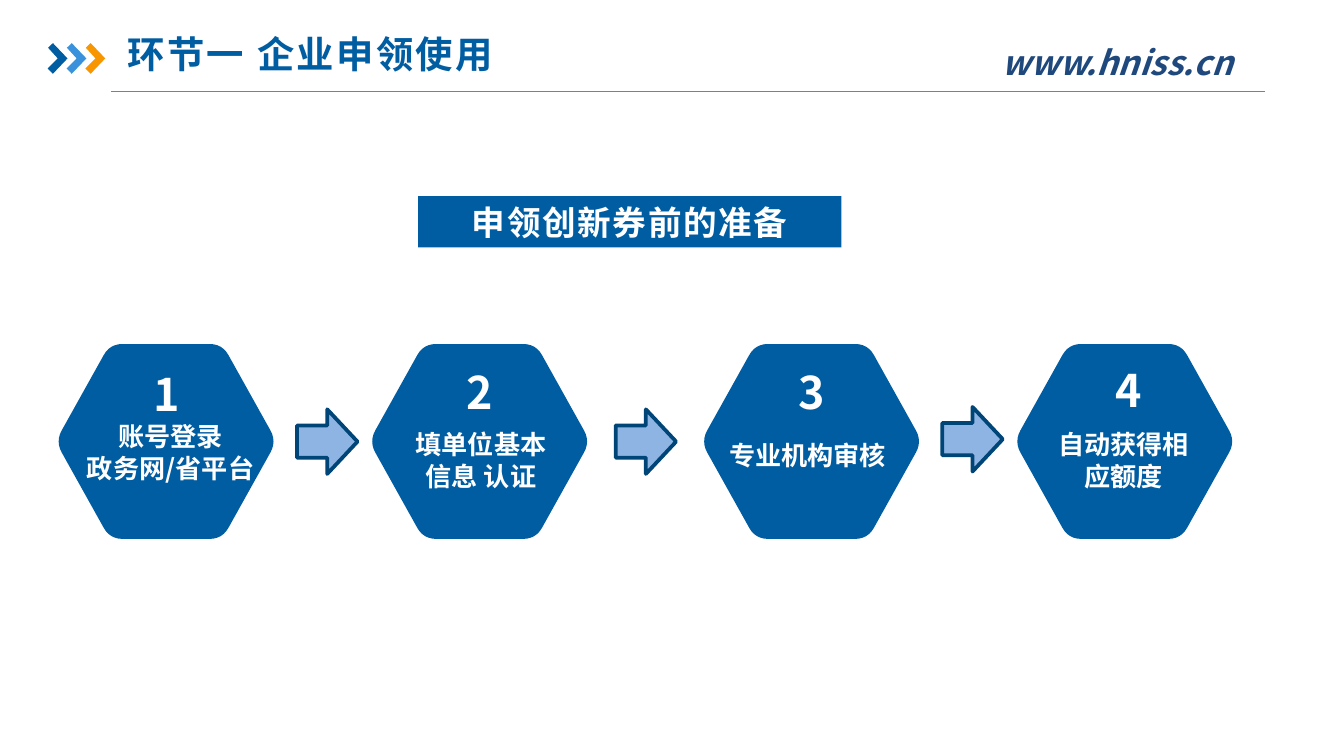
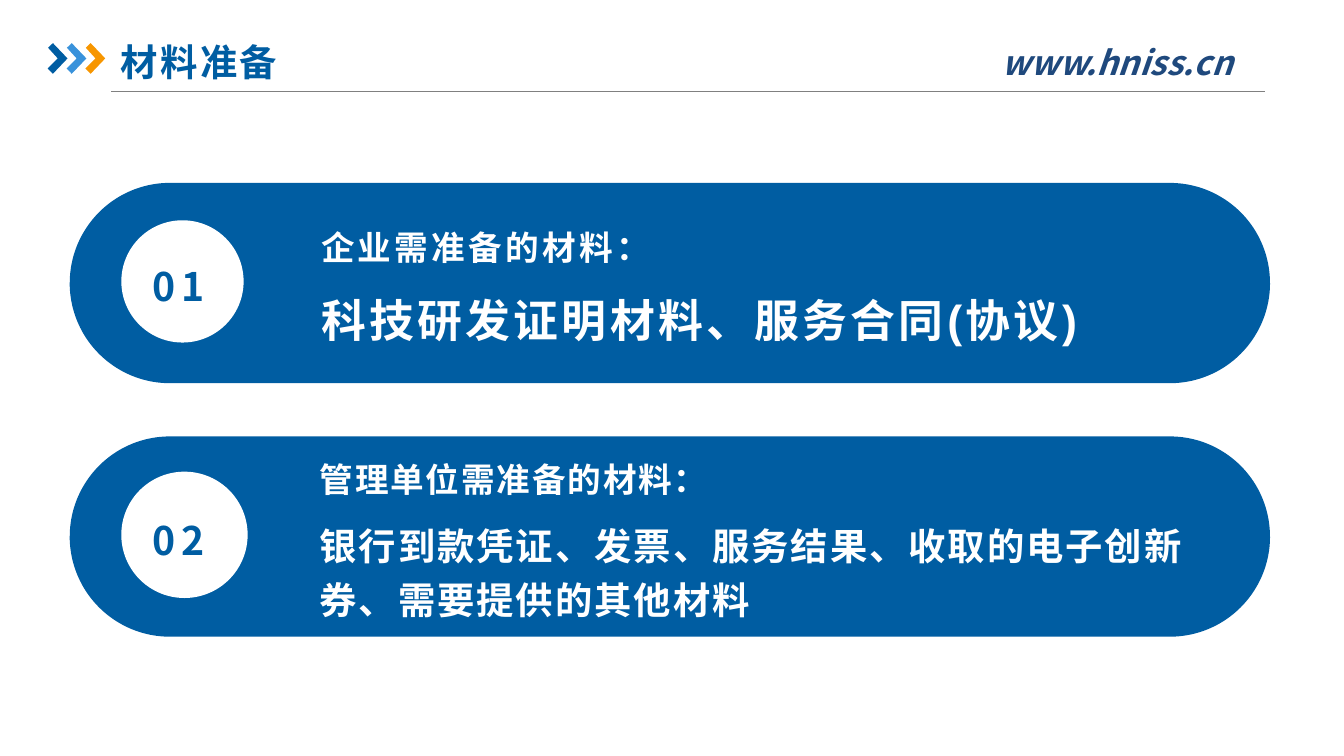
from lxml.etree import SubElement
from pptx import Presentation
from pptx.dml.color import RGBColor
from pptx.enum.shapes import MSO_CONNECTOR, MSO_SHAPE
from pptx.enum.text import MSO_ANCHOR, PP_ALIGN
from pptx.oxml.ns import qn
from pptx.util import Pt

COLORS = {
    "blue": "005DA2", "sky": "3992DB", "orange": "F79600", "navy": "1F497D",
    "gray": "808080", "pale": "8EB4E3", "edge": "004578", "white": "FFFFFF",
}
NOTO = "Noto Sans CJK SC"
INSET = (3.6, 1.44)
PAD = (5, 2.6)


def color(name):
    """Look up a palette colour."""
    return RGBColor.from_string(COLORS[name])


def paint(shape, fill, line=None, width=2):
    """Give a shape a flat fill and an optional outline."""
    shape.shadow.inherit = False
    shape.fill.solid()
    shape.fill.fore_color.rgb = color(fill)
    if line:
        shape.line.color.rgb = color(line)
        shape.line.width = Pt(width)
    else:
        shape.line.fill.background()
    return shape


def draw(slide, kind, box, fill, line=None):
    """Add a preset shape."""
    return paint(slide.shapes.add_shape(kind, *map(Pt, box)), fill, line)


def trace(slide, points, fill):
    """Add a closed outline through the points."""
    dots = [(Pt(x), Pt(y)) for x, y in points]
    form = slide.shapes.build_freeform(*dots[0], scale=1.0)
    form.add_line_segments(dots[1:], close=True)
    return paint(form.convert_to_shape(), fill)


def write(shape, lines, ink="white", face=NOTO, track=0, center=True,
          middle=False, pad=(0, 0), lead=None, after=None, italic=False):
    """Fill a shape with bold lines given as (text, size)."""
    frame = shape.text_frame
    frame.word_wrap = True
    frame.margin_left = frame.margin_right = Pt(pad[0])
    frame.margin_top = frame.margin_bottom = Pt(pad[1])
    frame.vertical_anchor = MSO_ANCHOR.MIDDLE if middle else MSO_ANCHOR.TOP
    for n, (text, size) in enumerate(lines):
        para = frame.add_paragraph() if n else frame.paragraphs[0]
        para.alignment = PP_ALIGN.CENTER if center else PP_ALIGN.LEFT
        if lead:
            para.line_spacing = lead
        if after:
            para.space_after = Pt(after)
        run = para.add_run()
        run.text = text
        font = run.font
        font.size, font.bold, font.name = Pt(size), True, face
        if italic:
            font.italic = True
        font.color.rgb = color(ink)
        props = run._r.get_or_add_rPr()
        if track:
            props.set("spc", str(round(track * 100)))
        SubElement(props, qn("a:ea")).set("typeface", NOTO)


def label(slide, box, lines, **style):
    """Add a text box."""
    write(slide.shapes.add_textbox(*map(Pt, box)), lines, **style)


def header(slide, title, box, middle=False):
    """Draw the rule, the chevrons, the site address and the title."""
    rule = slide.shapes.add_connector(
        MSO_CONNECTOR.STRAIGHT, Pt(59.6), Pt(49.2), Pt(677.6), Pt(49.2))
    rule.line.color.rgb = color("gray")
    rule.line.width = Pt(0.75)
    SubElement(rule._element.spPr, qn("a:effectLst"))
    arrow = [(0.4, 2.5), (3, 0), (10.8, 8.2), (3, 16.4), (0.2, 13.6), (5.6, 8.2)]
    for n, fill in enumerate(("blue", "sky", "orange")):
        left = 25.4 + n * 10.1
        trace(slide, [(left + x, 23.1 + y) for x, y in arrow], fill)
    label(slide, (513.4, 18.7, 170, 29), [("www.hniss.cn", 18)],
          ink="navy", italic=True, pad=(7.2, 3.6))
    label(slide, box, [(title, 20)], ink="blue", track=1.2,
          center=False, middle=middle, pad=INSET)


def hexa(slide, left, top, wide=115.6, high=104.4):
    """Draw a hexagon with rounded corners."""
    side, out, cut, parts = 27.7, 1.4, 6.8, 6
    mid = high / 2
    tips = [(side, 0), (wide - side, 0), (wide + out, mid),
            (wide - side, high), (side, high), (-out, mid)]
    points = []
    for n, (x, y) in enumerate(tips):
        ends = []
        for u, v in (tips[n - 1], tips[(n + 1) % 6]):
            far = ((u - x) ** 2 + (v - y) ** 2) ** 0.5
            ends.append((x + (u - x) * cut / far, y + (v - y) * cut / far))
        (a, b), (c, d) = ends
        for k in range(parts + 1):
            t = k / parts
            p, q, r = (1 - t) ** 2, 2 * t * (1 - t), t * t
            points.append((left + p * a + q * x + r * c,
                           top + p * b + q * y + r * d))
    trace(slide, points, "blue")


def step(slide, left, top, num, spot, lines, box):
    """Draw one numbered step, with its text placed from the corner."""
    hexa(slide, left, top)
    x, y, wide, high = box
    label(slide, (left + x, top + y, wide, high), [(text, 14) for text in lines])
    label(slide, (left + spot[0], top + spot[1], 33, 29), [(str(num), 24)])


def flow(slide, top=184.3):
    """Draw the banner, the four steps and the arrows between them."""
    banner = draw(slide, MSO_SHAPE.RECTANGLE, (224, 105.1, 226.8, 27.4), "blue")
    write(banner, [("申领创新券前的准备", 18)], face="Arial", track=0.9,
          middle=True, pad=PAD)
    steps = [
        (31.2, (41.5, 12.3), ["账号登录", "政务网/省平台"], (4.8, 41, 110.9, 34)),
        (199.2, (41.3, 10.8), ["填单位基本信息 认证"], (20.4, 45.4, 76.3, 34)),
        (377, (41.3, 10.8), ["专业机构审核"], (11.1, 51.1, 89.3, 17.3)),
        (544.8, (43.4, 10.1), ["自动获得相应额度"], (19, 45.4, 76.3, 34)),
    ]
    for num, (left, spot, lines, box) in enumerate(steps, 1):
        step(slide, left, top, num, spot, lines, box)
    for left, drop in ((159.1, 35), (329.8, 35), (504.8, 33.7)):
        draw(slide, MSO_SHAPE.RIGHT_ARROW, (left, top + drop, 32.4, 34.6),
             "pale", "edge")


def pill(slide, left, top, num, disc, lines, box, track):
    """Draw a rounded bar with a numbered disc and its text."""
    bar = draw(slide, MSO_SHAPE.ROUNDED_RECTANGLE, (left, top, 643, 107.3), "blue")
    bar.adjustments[0] = 0.5
    drop, size = disc
    draw(slide, MSO_SHAPE.OVAL, (left + 27.6, top + drop, size, size), "white")
    x, y, wide, high = box
    label(slide, (left + x, top + y, wide, high), lines, face="Arial",
          track=track, center=False, pad=PAD, lead=1.2, after=8)
    label(slide, (left + 27.4, top + 23.4, 62, 56.2), [(num, 21)], ink="blue",
          track=3, middle=True, pad=PAD, lead=1.3)


def main():
    """Build both slides and save them."""
    deck = Presentation()
    deck.slide_width, deck.slide_height = Pt(720), Pt(405)
    blank = deck.slide_layouts[6]

    slide = deck.slides.add_slide(blank)
    header(slide, "环节一 企业申领使用", (64.8, 15.1, 306, 36))
    flow(slide)

    slide = deck.slides.add_slide(blank)
    header(slide, "材料准备", (61.2, 15.1, 267, 36), middle=True)
    pill(slide, 37.4, 98, "01", (20, 65.5),
         [("企业需准备的材料：", 18), ("科技研发证明材料、服务合同(协议)", 24)],
         (129.6, 16.5, 433.4, 82), 1.8)
    pill(slide, 37.4, 233.8, "02", (18.9, 67.7),
         [("管理单位需准备的材料：", 18),
          ("银行到款凭证、发票、服务结果、收取的电子创新券、需要提供的其他材料", 20)],
         (128.9, 5.2, 490.3, 82), 1)
    deck.save("out.pptx")


if __name__ == "__main__":
    main()
